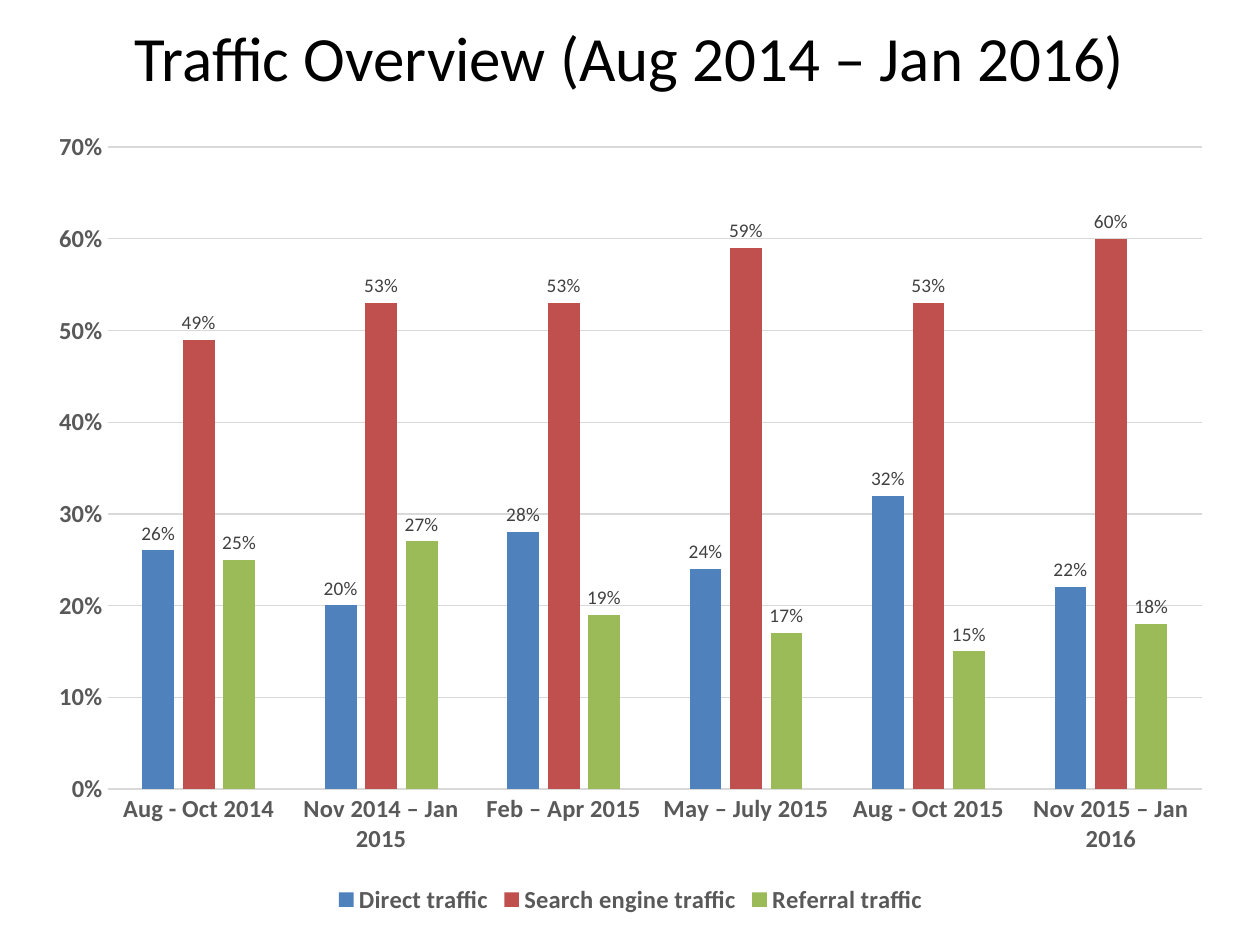
from dataclasses import dataclass

import pptx
import pptx.chart.data
import pptx.dml.color
import pptx.enum.chart
import pptx.enum.text
import pptx.util

RGB = pptx.dml.color.RGBColor
BLACK = RGB(0x00, 0x00, 0x00)
DARK = RGB(0x40, 0x40, 0x40)
GRAY = RGB(0x59, 0x59, 0x59)
PALE = RGB(0xD9, 0xD9, 0xD9)
BLUE = RGB(0x4F, 0x81, 0xBD)
RED = RGB(0xC0, 0x50, 0x4D)
GREEN = RGB(0x9B, 0xBB, 0x59)
FACE = "Calibri"
SCALE = 9144


@dataclass
class Box:
    left: int
    top: int
    width: int
    height: int

    def emu(self) -> list[int]:
        return [px(n) for n in (self.left, self.top, self.width, self.height)]


@dataclass
class Source:
    name: str
    color: RGB
    shares: tuple[float, ...]


TERMS = (
    "Aug - Oct 2014",
    "Nov 2014 – Jan 2015",
    "Feb – Apr 2015",
    "May – July 2015",
    "Aug - Oct 2015",
    "Nov 2015 – Jan 2016",
)
SOURCES = (
    Source("Direct traffic", BLUE, (0.26, 0.20, 0.28, 0.24, 0.32, 0.22)),
    Source("Search engine traffic", RED, (0.49, 0.53, 0.53, 0.59, 0.53, 0.60)),
    Source("Referral traffic", GREEN, (0.25, 0.27, 0.19, 0.17, 0.15, 0.18)),
)


def px(count: int) -> int:
    return pptx.util.Emu(count * SCALE)


def set_font(font, size: int, color: RGB, bold: bool = False) -> None:
    font.name = FACE
    font.size = pptx.util.Pt(size)
    font.bold = bold
    font.color.rgb = color


def set_line(line) -> None:
    line.color.rgb = PALE
    line.width = pptx.util.Pt(0.75)


def add_title(slide, box: Box, text: str) -> None:
    frame = slide.shapes.add_textbox(*box.emu()).text_frame
    frame.word_wrap = True
    frame.vertical_anchor = pptx.enum.text.MSO_ANCHOR.MIDDLE
    para = frame.paragraphs[0]
    para.text = text
    para.alignment = pptx.enum.text.PP_ALIGN.CENTER
    set_font(para.font, 36, BLACK)


def style_axes(chart) -> None:
    for axis in (chart.category_axis, chart.value_axis):
        axis.major_tick_mark = pptx.enum.chart.XL_TICK_MARK.NONE
        axis.minor_tick_mark = pptx.enum.chart.XL_TICK_MARK.NONE
        set_font(axis.tick_labels.font, 14, GRAY, True)
    set_line(chart.category_axis.format.line)
    value = chart.value_axis
    value.minimum_scale = 0
    value.maximum_scale = 0.7
    value.major_unit = 0.1
    value.format.line.fill.background()
    value.has_major_gridlines = True
    set_line(value.major_gridlines.format.line)
    value.tick_labels.number_format = "0%"
    value.tick_labels.number_format_is_linked = False


def style_bars(plot) -> None:
    plot.gap_width = 219
    plot.overlap = -27
    plot.vary_by_categories = False
    for bars, source in zip(plot.series, SOURCES):
        bars.format.fill.solid()
        bars.format.fill.fore_color.rgb = source.color
        bars.invert_if_negative = False
        labels = bars.data_labels
        labels.show_value = True
        labels.position = pptx.enum.chart.XL_LABEL_POSITION.OUTSIDE_END
        labels.number_format = "0%"
        labels.number_format_is_linked = False
        set_font(labels.font, 11, DARK)


def add_chart(slide, box: Box) -> None:
    data = pptx.chart.data.CategoryChartData(number_format="0%")
    data.categories = TERMS
    for source in SOURCES:
        data.add_series(source.name, source.shares)
    kind = pptx.enum.chart.XL_CHART_TYPE.COLUMN_CLUSTERED
    chart = slide.shapes.add_chart(kind, *box.emu(), data).chart
    set_font(chart.font, 11, BLACK)
    chart.has_title = False
    style_axes(chart)
    style_bars(chart.plots[0])
    chart.has_legend = True
    chart.legend.position = pptx.enum.chart.XL_LEGEND_POSITION.BOTTOM
    chart.legend.include_in_layout = False
    set_font(chart.legend.font, 14, GRAY, True)


def main() -> None:
    deck = pptx.Presentation()
    deck.slide_width = px(1000)
    deck.slide_height = px(750)
    slide = deck.slides.add_slide(deck.slide_layouts[6])
    add_title(slide, Box(50, 14, 900, 61), "Traffic Overview (Aug 2014 – Jan 2016)")
    add_chart(slide, Box(28, 92, 945, 638))
    deck.save("out.pptx")


if __name__ == "__main__":
    main()
